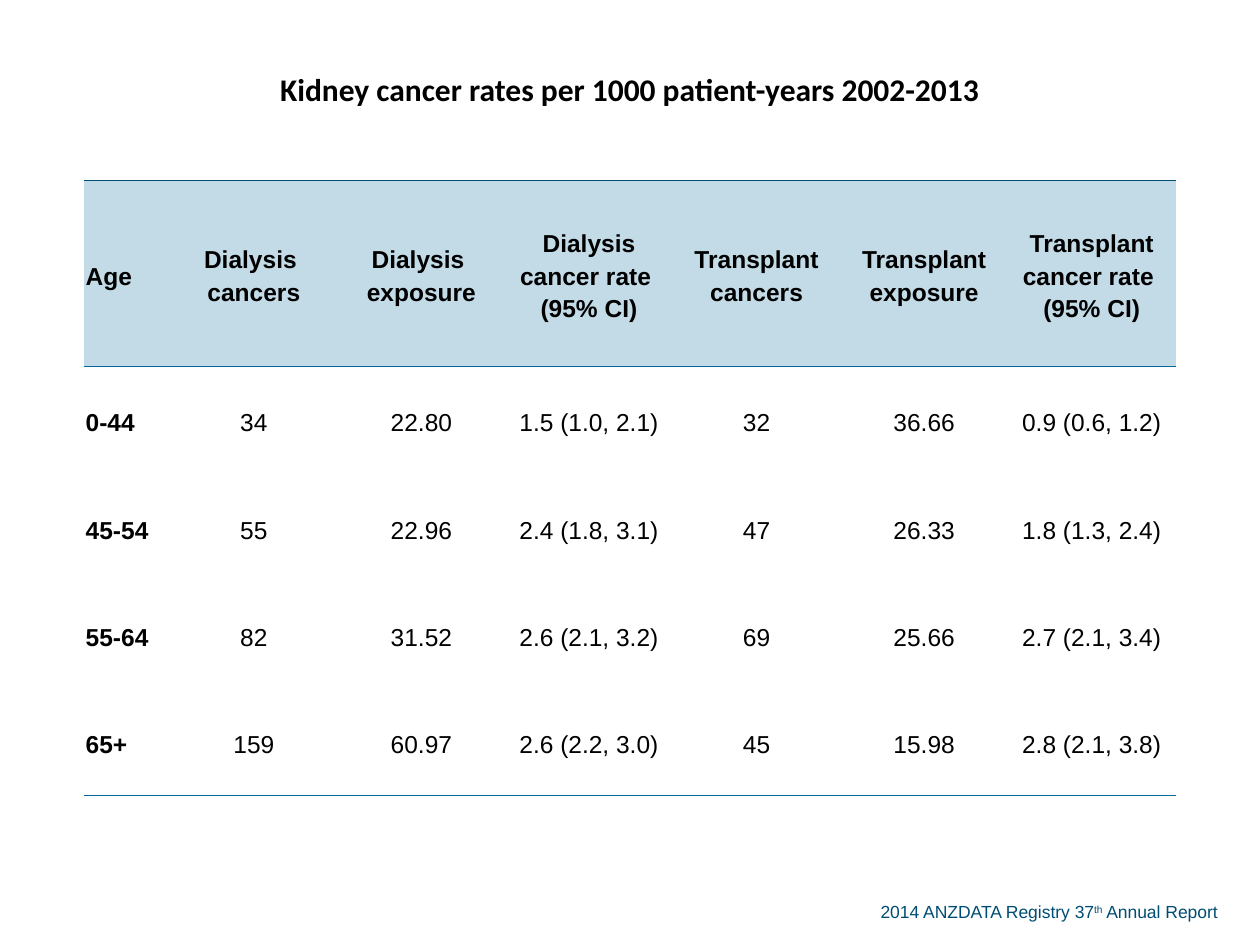
from copy import deepcopy
from dataclasses import dataclass

from lxml.etree import SubElement
from pptx import Presentation
from pptx.dml.color import RGBColor
from pptx.enum.text import MSO_ANCHOR, MSO_AUTO_SIZE, PP_ALIGN
from pptx.oxml.ns import qn
from pptx.util import Inches, Pt


@dataclass(frozen=True)
class Theme:
    ink: str = "000000"
    navy: str = "004D73"
    rule: str = "006699"
    header_fill: str = "C2DBE7"
    title_font: str = "Calibri"
    body_font: str = "Arial"
    title_size: int = 18
    body_size: int = 14
    footer_size: int = 10


THEME = Theme()
TITLE = "Kidney cancer rates per 1000 patient-years 2002-2013"
HEADINGS = ["Age", "Dialysis \vcancers", "Dialysis \vexposure",
            "Dialysis cancer rate \v(95% CI)", "Transplant cancers",
            "Transplant exposure", "Transplant cancer rate \v(95% CI)"]
AGE_GROUPS = [
    ["0-44", "34", "22.80", "1.5 (1.0, 2.1)", "32", "36.66", "0.9 (0.6, 1.2)"],
    ["45-54", "55", "22.96", "2.4 (1.8, 3.1)", "47", "26.33", "1.8 (1.3, 2.4)"],
    ["55-64", "82", "31.52", "2.6 (2.1, 3.2)", "69", "25.66", "2.7 (2.1, 3.4)"],
    ["65+", "159", "60.97", "2.6 (2.2, 3.0)", "45", "15.98", "2.8 (2.1, 3.8)"],
]
COLUMN_WIDTHS = [0.68] + [1.33] * 6
ROW_HEIGHTS = [1.43, 1.48] + [0.85] * 4


def add_text(paragraph, text, size=THEME.body_size, font=THEME.body_font,
             color=THEME.ink, bold=False, baseline=0):
    """Append text to the paragraph; a vertical tab starts a new line."""
    for index, line in enumerate(text.split("\v")):
        if index:
            paragraph.add_line_break()
        run = paragraph.add_run()
        run.text = line
        run.font.size = Pt(size)
        run.font.name = font
        run.font.bold = bold
        run.font.color.rgb = RGBColor.from_string(color)
        properties = run._r.get_or_add_rPr()
        if baseline:
            properties.set("baseline", str(baseline * 1000))
    for line_break in paragraph._p.findall(qn("a:br")):
        line_break.append(deepcopy(properties))


def set_borders(cell, top=None, bottom=None):
    """Draw the given (color, points) edges and hide the others."""
    edges = {"a:lnL": None, "a:lnR": None, "a:lnT": top, "a:lnB": bottom}
    for tag, edge in edges.items():
        line = SubElement(cell._tc.get_or_add_tcPr(), qn(tag))
        if edge is None:
            SubElement(line, qn("a:noFill"))
            continue
        color, points = edge
        line.set("w", str(Pt(points)))
        fill = SubElement(line, qn("a:solidFill"))
        SubElement(fill, qn("a:srgbClr")).set("val", color)


def format_cell(cell, top=None, bottom=None, fill=None):
    set_borders(cell, top, bottom)
    if fill:
        cell.fill.solid()
        cell.fill.fore_color.rgb = RGBColor.from_string(fill)
    else:
        cell.fill.background()
    cell.vertical_anchor = MSO_ANCHOR.MIDDLE
    cell.margin_left = cell.margin_right = cell.margin_top = Inches(0.01)
    cell.margin_bottom = 0


def add_rates_table(slide, left, top, width, height):
    rows = [[TITLE], HEADINGS] + AGE_GROUPS
    table = slide.shapes.add_table(len(rows), len(HEADINGS),
                                   left, top, width, height).table
    table.first_row = table.horz_banding = False
    for column, column_width in zip(table.columns, COLUMN_WIDTHS):
        column.width = Inches(column_width)
    for row, row_height in zip(table.rows, ROW_HEIGHTS):
        row.height = Inches(row_height)

    strong, thin = (THEME.navy, 0.75), (THEME.rule, 0.5)
    edges_below = [strong, thin, None, None, None, thin]
    edges_above = [None] + edges_below[:-1]
    for r, row in enumerate(table.rows):
        for cell in row.cells:
            format_cell(cell, edges_above[r], edges_below[r],
                        THEME.header_fill if r == 1 else None)

    table.cell(0, 0).merge(table.cell(0, len(HEADINGS) - 1))
    title = table.cell(0, 0).text_frame.paragraphs[0]
    title.alignment = PP_ALIGN.CENTER
    add_text(title, TITLE, size=THEME.title_size, font=THEME.title_font, bold=True)

    for r, values in enumerate(rows[1:], start=1):
        for c, value in enumerate(values):
            paragraph = table.cell(r, c).text_frame.paragraphs[0]
            paragraph.alignment = PP_ALIGN.CENTER if c else PP_ALIGN.LEFT
            paragraph.line_spacing = 1.19
            paragraph.space_after = Pt(14)
            add_text(paragraph, value, bold=r == 1 or c == 0)


def add_footer(slide, left, top, width, height):
    frame = slide.shapes.add_textbox(left, top, width, height).text_frame
    frame.word_wrap = True
    frame.auto_size = MSO_AUTO_SIZE.SHAPE_TO_FIT_TEXT
    for text, baseline in [("2014 ANZDATA Registry 37", 0), ("th", 30),
                           (" Annual Report", 0)]:
        add_text(frame.paragraphs[0], text, size=THEME.footer_size,
                 color=THEME.navy, baseline=baseline)


def main():
    presentation = Presentation()
    presentation.slide_width, presentation.slide_height = Inches(10), Inches(7.5)
    slide = presentation.slides.add_slide(presentation.slide_layouts[6])
    add_footer(slide, Inches(6.89), Inches(7.1), Inches(2.99), Inches(0.27))
    add_rates_table(slide, Inches(0.67), 0, Inches(sum(COLUMN_WIDTHS)),
                    Inches(sum(ROW_HEIGHTS)))
    presentation.save("out.pptx")


if __name__ == "__main__":
    main()
